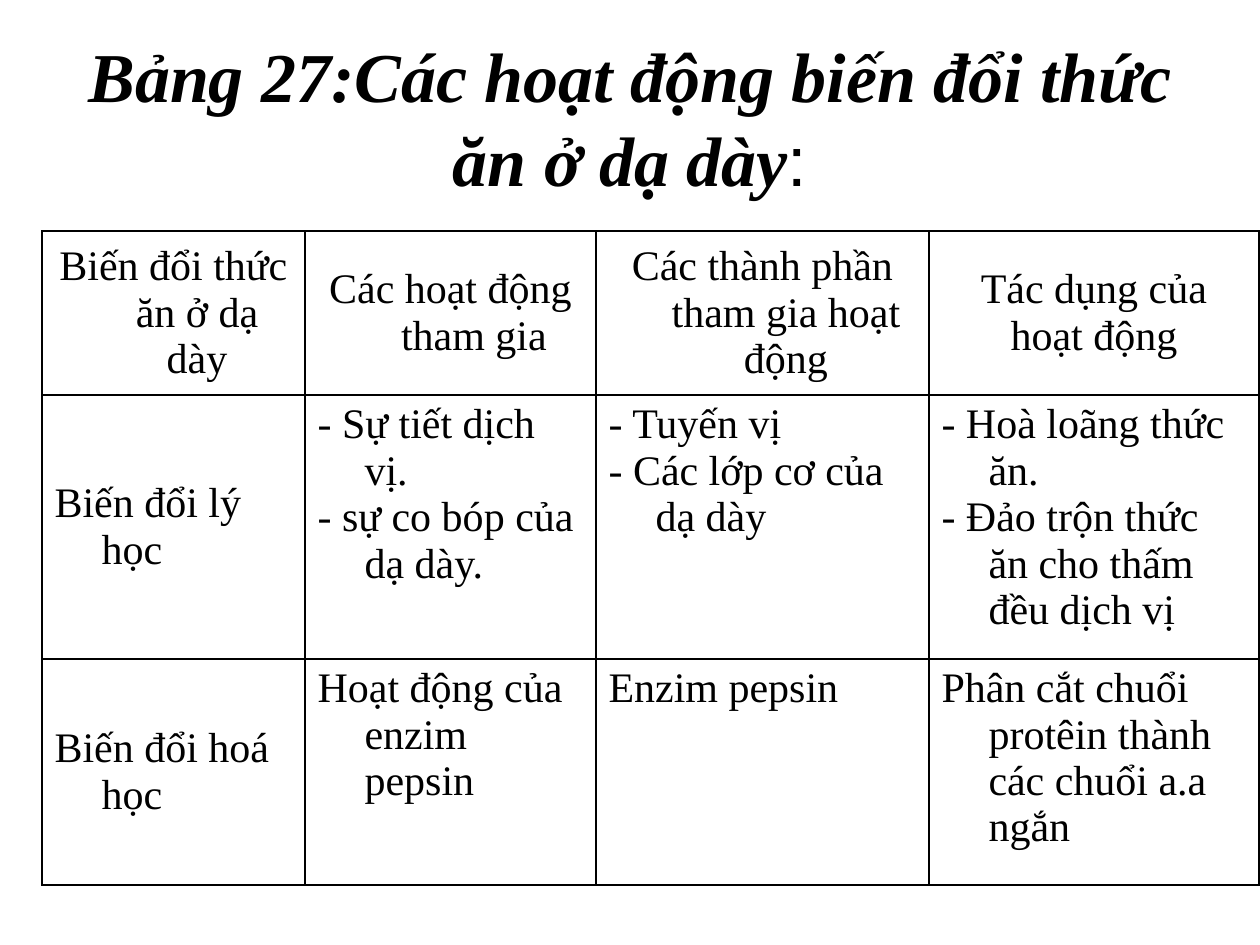
"""Build a slide with a table of how the stomach transforms food."""
from lxml.etree import SubElement
from pptx import Presentation
from pptx.dml.color import RGBColor
from pptx.enum.text import MSO_ANCHOR, MSO_AUTO_SIZE, PP_ALIGN
from pptx.oxml.ns import qn
from pptx.util import Pt

PX = 914400 / 126
BLACK = RGBColor(0, 0, 0)
SERIF = "Times New Roman"

TITLE_RUNS = [
    ("Bảng 27:Các hoạt động biến đổi thức ăn ở dạ dày",
     {"name": SERIF, "size": Pt(40), "bold": True, "italic": True}),
    (":", {"name": "Arial", "size": Pt(40), "bold": False, "italic": False}),
]
TITLE_BOX = {"left": 63, "top": 38, "width": 1134, "height": 158}

ROWS = [
    [["Biến đổi thức ăn ở dạ dày"],
     ["Các hoạt động tham gia"],
     ["Các thành phần tham gia hoạt động"],
     ["Tác dụng của", "hoạt động"]],
    [["Biến đổi lý học"],
     ["- Sự tiết dịch vị.", "- sự co bóp của dạ dày."],
     ["- Tuyến vị", "- Các lớp cơ của dạ dày"],
     ["- Hoà loãng thức ăn.", "- Đảo trộn thức ăn cho thấm đều dịch vị"]],
    [["Biến đổi hoá học"],
     ["Hoạt động của enzim pepsin"],
     ["Enzim pepsin"],
     ["Phân cắt chuổi protêin thành các chuổi a.a ngắn"]],
]
TABLE_LEFT, TABLE_TOP = 42, 231
COLUMN_WIDTHS = [263, 291, 333, 330]
ROW_HEIGHTS = [164, 264, 226]
HANGING_INDENT = 47
CELL_FONT = {"name": SERIF, "size": Pt(24), "bold": False}


def emu(pixels):
    return round(pixels * PX)


def format_font(font, values):
    font.color.rgb = BLACK
    for name, value in values.items():
        setattr(font, name, value)


def add_borders(cell):
    properties = cell._tc.get_or_add_tcPr()
    for index, side in enumerate(("lnL", "lnR", "lnT", "lnB")):
        line = SubElement(properties, qn(f"a:{side}"), w=str(Pt(1)))
        fill = SubElement(line, qn("a:solidFill"))
        SubElement(fill, qn("a:srgbClr"), val=str(BLACK))
        properties.insert(index, line)


def fill_cell(cell, lines, is_header, is_label):
    cell.fill.background()
    add_borders(cell)
    cell.vertical_anchor = MSO_ANCHOR.MIDDLE if is_header or is_label else MSO_ANCHOR.TOP
    cell.text_frame.text = "\n".join(lines)
    for paragraph in cell.text_frame.paragraphs:
        paragraph.alignment = PP_ALIGN.CENTER if is_header else PP_ALIGN.LEFT
        properties = paragraph._p.get_or_add_pPr()
        properties.set("marL", str(emu(HANGING_INDENT)))
        properties.set("indent", str(-emu(HANGING_INDENT)))
        format_font(paragraph.runs[0].font, CELL_FONT)


def add_title(slide):
    title = slide.shapes.title
    for name, value in TITLE_BOX.items():
        setattr(title, name, emu(value))
    frame = title.text_frame
    frame.word_wrap = True
    frame.auto_size = MSO_AUTO_SIZE.NONE
    frame.vertical_anchor = MSO_ANCHOR.MIDDLE
    paragraph = frame.paragraphs[0]
    paragraph.alignment = PP_ALIGN.CENTER
    for text, values in TITLE_RUNS:
        run = paragraph.add_run()
        run.text = text
        format_font(run.font, values)


def add_activity_table(slide):
    box = (TABLE_LEFT, TABLE_TOP, sum(COLUMN_WIDTHS), sum(ROW_HEIGHTS))
    table = slide.shapes.add_table(
        len(ROWS), len(COLUMN_WIDTHS), *map(emu, box)).table
    table.first_row = table.horz_banding = False
    for column, width in zip(table.columns, COLUMN_WIDTHS):
        column.width = emu(width)
    for row_index, (row, height) in enumerate(zip(ROWS, ROW_HEIGHTS)):
        table.rows[row_index].height = emu(height)
        for column_index, lines in enumerate(row):
            fill_cell(table.cell(row_index, column_index), lines,
                      row_index == 0, column_index == 0)


def main():
    presentation = Presentation()
    presentation.slide_width, presentation.slide_height = emu(1260), emu(945)
    slide = presentation.slides.add_slide(presentation.slide_layouts[5])
    add_title(slide)
    add_activity_table(slide)
    presentation.save("out.pptx")


if __name__ == "__main__":
    main()
